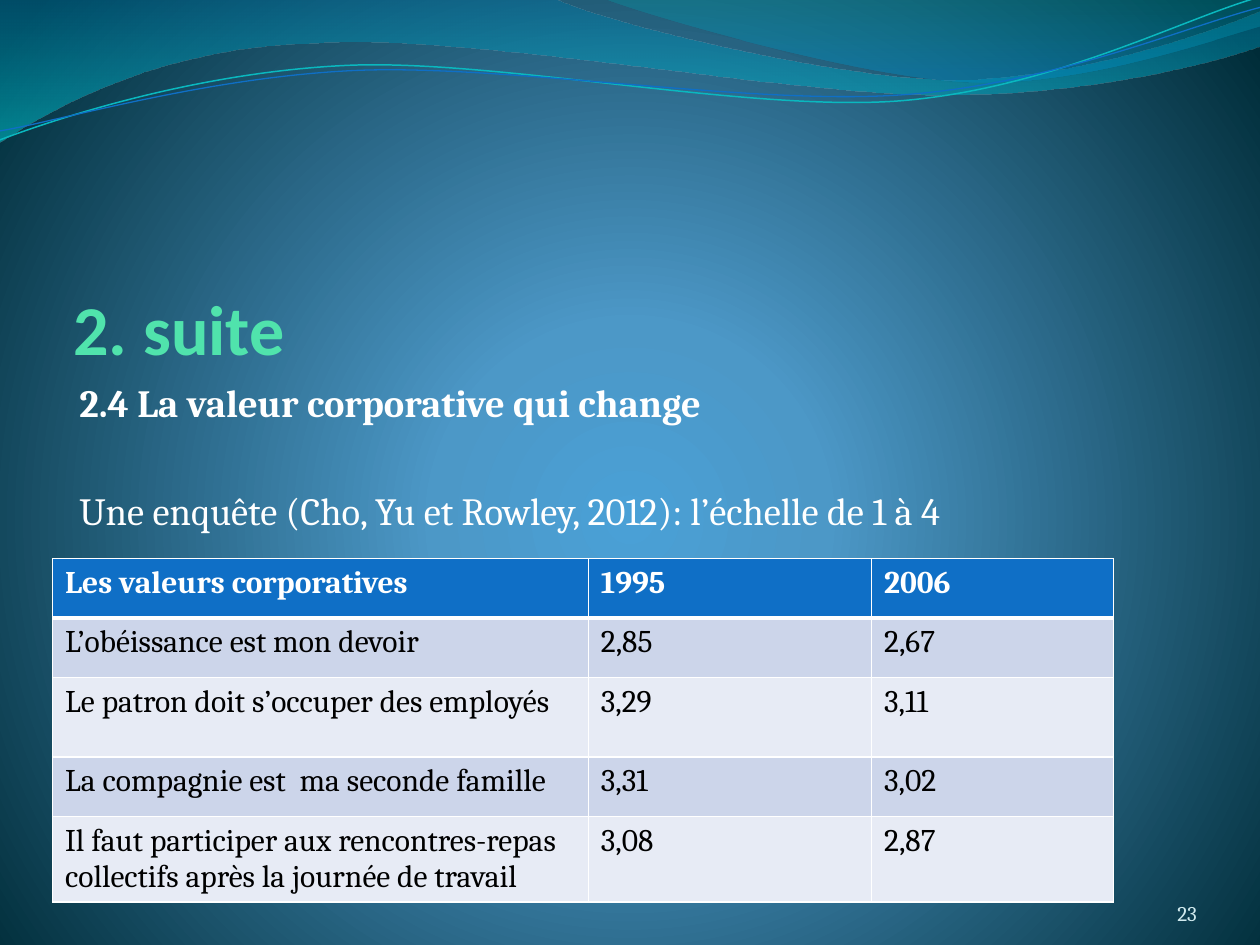
from lxml.etree import SubElement
from pptx import Presentation
from pptx.dml.color import RGBColor
from pptx.enum.text import MSO_ANCHOR, MSO_AUTO_SIZE, PP_ALIGN
from pptx.oxml.ns import qn
from pptx.util import Cm, Pt

WHITE = RGBColor(0xFF, 0xFF, 0xFF)
BLACK = RGBColor(0, 0, 0)
MINT = RGBColor(0x50, 0xE3, 0xAC)
PALE_CYAN = RGBColor(0xD1, 0xEA, 0xEE)
BLUE = RGBColor(0x0F, 0x6F, 0xC6)
TURQUOISE = RGBColor(0x0A, 0xB8, 0xBF)
BAND_DARK = RGBColor(0xCC, 0xD5, 0xEA)
BAND_LIGHT = RGBColor(0xE7, 0xEB, 0xF5)
SKY = RGBColor(0x4A, 0xA0, 0xD6)
STEEL = RGBColor(0x4C, 0x98, 0xC7)
NIGHT = RGBColor(0x00, 0x2C, 0x38)
OCEAN = RGBColor(0x00, 0x74, 0xA1)
AQUA = RGBColor(0x00, 0xC6, 0xCF)
TEAL = RGBColor(0x00, 0xA1, 0xA9)
AZURE = RGBColor(0x00, 0x8B, 0xBF)


def set_gradient(fill, owner, stops, center=None):
    """Fill with (position, colour, opacity) stops, downwards or around a center."""
    fill.gradient()
    gradient = owner.find(".//" + qn("a:gradFill"))
    for child in list(gradient):
        gradient.remove(child)
    stop_list = SubElement(gradient, qn("a:gsLst"))
    for position, color, opacity in stops:
        stop = SubElement(stop_list, qn("a:gs"), pos=str(position * 1000))
        tint = SubElement(stop, qn("a:srgbClr"), val=str(color))
        if opacity < 100:
            SubElement(tint, qn("a:alpha"), val=str(opacity * 1000))
    if center:
        circle = SubElement(gradient, qn("a:path"), {"path": "circle"})
        sides = {side: str(inset * 1000) for side, inset in zip("ltrb", center)}
        SubElement(circle, qn("a:fillToRect"), sides)
    else:
        SubElement(gradient, qn("a:lin"), ang="5400000", scaled="0")


def add_wave(shapes, start, segments, close):
    """Outline in cm; a segment is one point (line) or three (Bezier curve)."""
    outline = [(Cm(x), Cm(y)) for segment in segments for x, y in segment]
    builder = shapes.build_freeform(Cm(start[0]), Cm(start[1]))
    builder.add_line_segments(outline, close=close)
    wave = builder.convert_to_shape()
    wave.shadow.inherit = False
    lines = iter(wave._element.findall(".//" + qn("a:lnTo")))
    for segment in segments:
        steps = [next(lines) for _ in segment]
        if len(steps) == 3:
            curve = SubElement(steps[0].getparent(), qn("a:cubicBezTo"))
            steps[0].addprevious(curve)
            for step in steps:
                curve.append(step[0])
                step.getparent().remove(step)
    return wave


prs = Presentation()
prs.slide_width, prs.slide_height = Cm(25.4), Cm(19.05)
slide = prs.slides.add_slide(prs.slide_layouts[1])
shapes = slide.shapes
set_gradient(slide.background.fill, slide._element,
             [(0, SKY, 100), (25, STEEL, 100), (100, NIGHT, 100)],
             center=(10, 110, 10, 100))

# Waves along the top
bands = [
    ((0, 0),
     [[(11.18, -0.03)],
      [(12.09, 0.43), (16.87, 1.6), (19.25, 1.6)],
      [(21.67, 1.6), (24.33, 0.66), (25.4, 0.23)],
      [(25.43, 0.91)],
      [(24.97, 1.12), (22.1, 1.93), (18.95, 1.91)],
      [(15.8, 1.91), (9.7, 0.71), (6.53, 0.86)],
      [(3.28, 0.91), (1.17, 2.11), (-0.03, 2.87)]],
     [(0, OCEAN, 45), (100, AQUA, 55)]),
    ((12.17, -0.03),
     [[(12.93, 0.28), (17.32, 1.57), (19.53, 1.65)],
      [(21.74, 1.75), (24.41, 0.81), (25.4, 0.53)],
      [(25.4, 0)]],
     [(0, TEAL, 30), (80, AZURE, 45)]),
]
for start, segments, stops in bands:
    band = add_wave(shapes, start, segments, close=True)
    set_gradient(band.fill, band._element, stops)
    band.line.fill.background()

strands = [
    ((-0.05, 2.22),
     [[(1.19, 1.82), (4.02, 1.04), (7.05, 1.05)],
      [(10.05, 1.07), (15.02, 2.37), (18.08, 2.29)],
      [(21.13, 2.2), (23.87, 0.91), (25.41, 0.55)]],
     TURQUOISE, 0.85),
    ((-0.04, 2.04),
     [[(1.16, 1.9), (4.18, 1.15), (7.2, 1.16)],
      [(10.25, 1.18), (15.13, 2.25), (18.18, 2.17)],
      [(21.21, 2.1), (23.96, 1.06), (25.45, 0.75)]],
     BLUE, 0.75),
]
for start, segments, color, width in strands:
    strand = add_wave(shapes, start, segments, close=False)
    strand.rotation = 357.3
    strand.fill.background()
    strand.line.color.rgb = color
    strand.line.width = Pt(width)

# Title, body and page number
title, body = shapes.title, slide.placeholders[1]
title.left, title.top, title.width, title.height = Cm(1.48), Cm(3.66), Cm(21.59), Cm(3.78)
body.left, body.top, body.width, body.height = Cm(1.47), Cm(7.52), Cm(21.59), Cm(11.53)
page_number = shapes.add_textbox(Cm(22.02), Cm(17.65), Cm(2.11), Cm(1.02))

LEFT, RIGHT = PP_ALIGN.LEFT, PP_ALIGN.RIGHT
TOP, BOTTOM = MSO_ANCHOR.TOP, MSO_ANCHOR.BOTTOM
texts = [
    (title, 0, BOTTOM, LEFT, "Calibri", MINT, [("2. suite", 40, True, 0)]),
    (body, 0.13, TOP, LEFT, "Cambria", WHITE,
     [("2.4 La valeur corporative qui change", 22, True, 5),
      ("Une enquête (Cho, Yu et Rowley, 2012): l’échelle de 1 à 4", 22, False, 34.8)]),
    (page_number, 0, BOTTOM, RIGHT, "Cambria", PALE_CYAN, [("23", 12, False, 0)]),
]
for holder, inset, anchor, alignment, font_name, color, lines in texts:
    shapes._spTree.append(holder._element)
    frame = holder.text_frame
    frame.word_wrap = True
    frame.auto_size = MSO_AUTO_SIZE.NONE
    frame.vertical_anchor = anchor
    frame.margin_left = frame.margin_right = Cm(inset)
    frame.margin_top = frame.margin_bottom = Cm(inset)
    frame.text = "\n".join(line[0] for line in lines)
    for paragraph, (_, size, bold, space_before) in zip(frame.paragraphs, lines):
        paragraph.alignment = alignment
        paragraph.space_before = Pt(space_before)
        font = paragraph.font
        font.name, font.size, font.bold = font_name, Pt(size), bold
        font.color.rgb = color
for paragraph in body.text_frame.paragraphs:
    properties = paragraph._p.get_or_add_pPr()
    properties.set("marL", "0")
    properties.set("indent", "0")
    bullet = SubElement(properties, qn("a:buNone"))
    properties.find(qn("a:spcBef")).addnext(bullet)

# Survey table
survey = [
    ("Les valeurs corporatives", "1995", "2006"),
    ("L’obéissance est mon devoir", "2,85", "2,67"),
    ("Le patron doit s’occuper des employés", "3,29", "3,11"),
    ("La compagnie est  ma seconde famille", "3,31", "3,02"),
    ("Il faut participer aux rencontres-repas collectifs après la journée de travail",
     "3,08", "2,87"),
]
column_widths = [10.8, 5.71, 4.88]
row_heights = [1.2, 1.2, 1.6, 1.2, 1.6]
table = shapes.add_table(len(survey), len(column_widths), Cm(1.06), Cm(11.26),
                         Cm(sum(column_widths)), Cm(sum(row_heights))).table
for column, width in zip(table.columns, column_widths):
    column.width = Cm(width)
for row, height in zip(table.rows, row_heights):
    row.height = Cm(height)

for r, values in enumerate(survey):
    is_header = r == 0
    row_color = BLUE if is_header else (BAND_LIGHT, BAND_DARK)[r % 2]
    for c, value in enumerate(values):
        cell = table.cell(r, c)
        cell.text = value
        font = cell.text_frame.paragraphs[0].font
        font.name, font.size, font.bold = "Cambria", Pt(18), is_header
        font.color.rgb = WHITE if is_header else BLACK
        for side in "LRTB":
            thick = (r, side) in ((0, "B"), (1, "T"))
            border = SubElement(cell._tc.get_or_add_tcPr(), qn("a:ln" + side),
                                w=str(Pt(3 if thick else 1)))
            paint = SubElement(border, qn("a:solidFill"))
            SubElement(paint, qn("a:srgbClr"), val=str(WHITE))
        cell.fill.solid()
        cell.fill.fore_color.rgb = row_color

prs.save("out.pptx")
